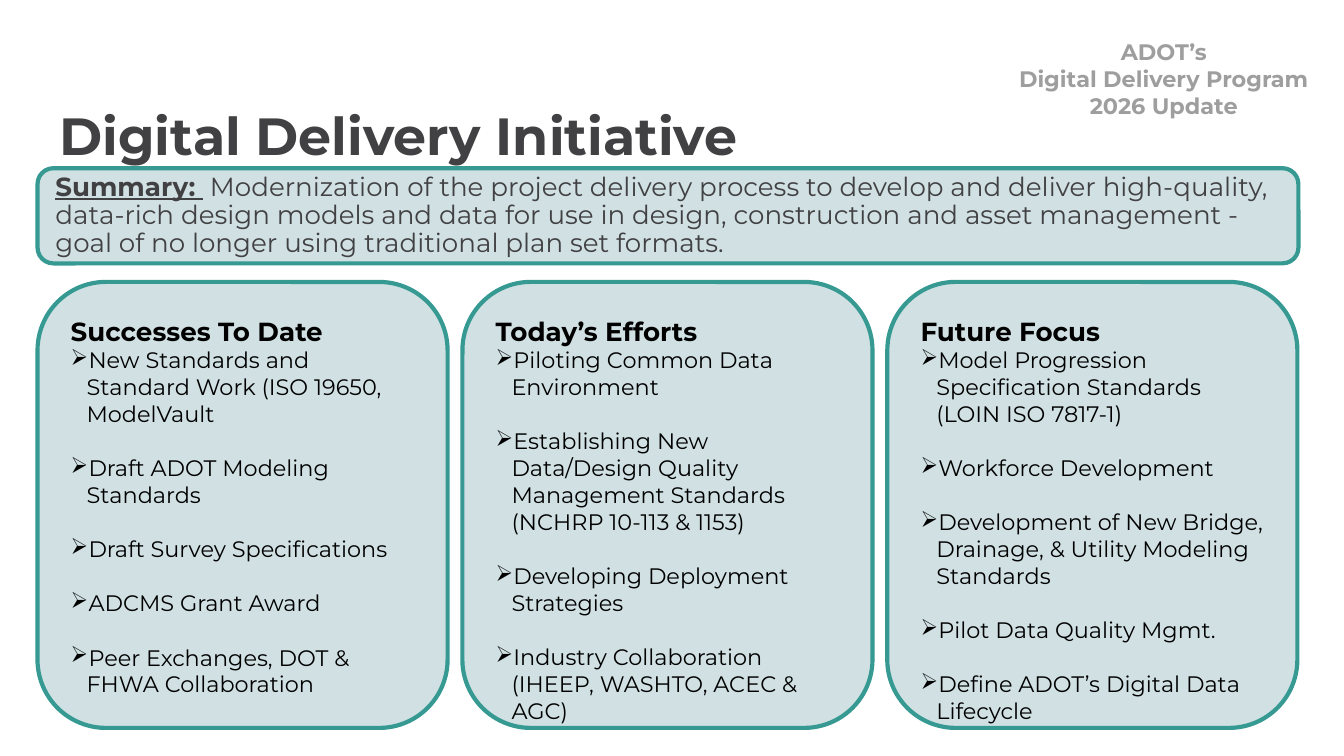
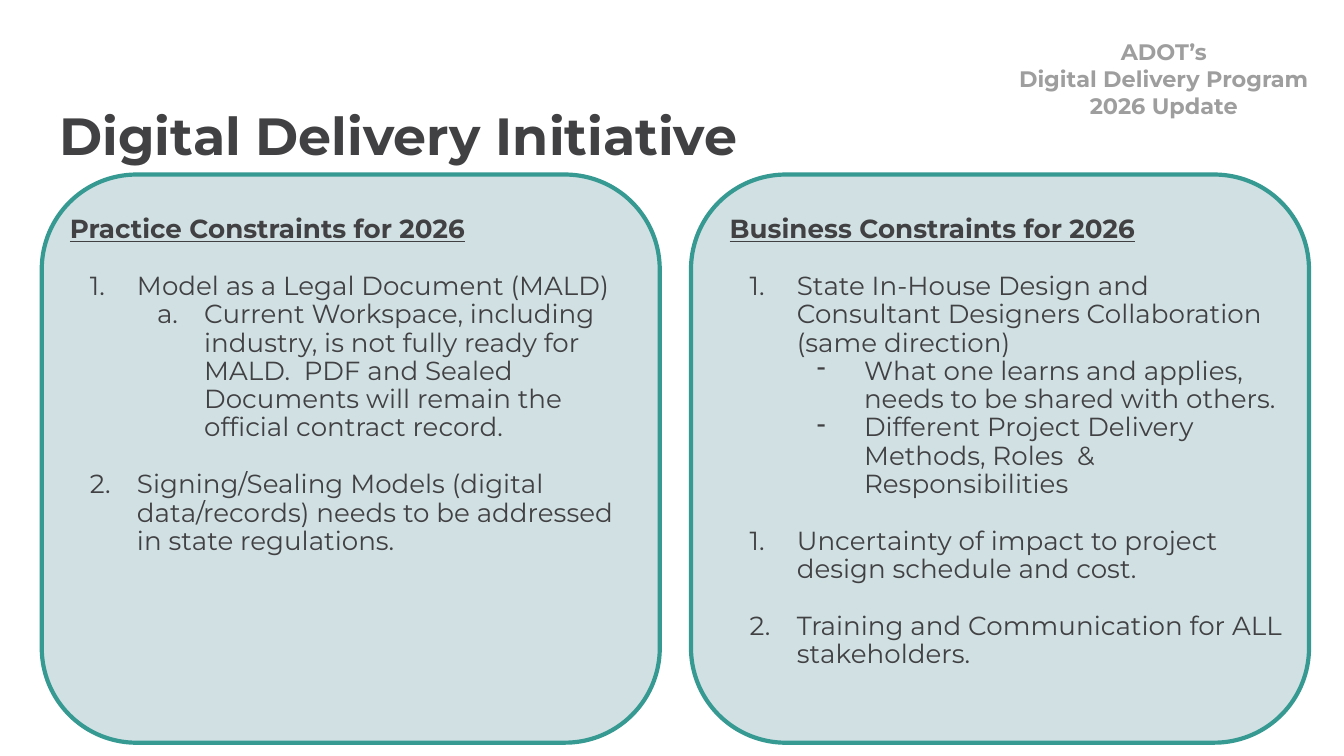
from lxml.etree import SubElement
from pptx import Presentation
from pptx.dml.color import RGBColor
from pptx.enum.shapes import MSO_SHAPE
from pptx.enum.text import MSO_ANCHOR, MSO_AUTO_SIZE, PP_ALIGN
from pptx.oxml.ns import qn
from pptx.util import Cm, Pt

INK = RGBColor(0x41, 0x40, 0x42)
BLACK = RGBColor(0x00, 0x00, 0x00)
GRAY = RGBColor(0x9E, 0x9E, 0x9E)
TEAL = RGBColor(0x36, 0x99, 0x92)
PALE = RGBColor(0xD0, 0xE0, 0xE3)
FONT = "Montserrat"

CARD_GAP = 14.6  # one 12 pt line
LIST_GAP = 15.3  # one 14 pt line at 90 %

# Kind of list item: bullet element, its attributes, left margin, hanging indent, level
BULLETS = {
    "arrow": ("a:buChar", {"char": "➢"}, 0.3, -0.53, 0),
    "number": ("a:buAutoNum", {"type": "arabicPeriod"}, 1.27, -0.89, 0),
    "letter": ("a:buAutoNum", {"type": "alphaLcPeriod"}, 2.54, -0.89, 1),
    "dash": ("a:buChar", {"char": "-"}, 2.54, -0.89, 0),
}

FOCUS_AREAS = [
    ("Successes To Date", [
        "New Standards and Standard Work (ISO 19650, ModelVault)"[:-1],
        "Draft ADOT Modeling Standards",
        "Draft Survey Specifications",
        "ADCMS Grant Award",
        "Peer Exchanges, DOT & FHWA Collaboration",
    ]),
    ("Today’s Efforts", [
        "Piloting Common Data Environment",
        "Establishing New Data/Design Quality Management Standards (NCHRP 10-113 & 1153)",
        "Developing Deployment Strategies",
        "Industry Collaboration (IHEEP, WASHTO, ACEC & AGC)",
    ]),
    ("Future Focus", [
        "Model Progression Specification Standards (LOIN ISO 7817-1)",
        "Workforce Development",
        "Development of New Bridge, Drainage, & Utility Modeling Standards",
        "Pilot Data Quality Mgmt.",
        "Define ADOT’s Digital Data Lifecycle",
    ]),
]

CONSTRAINTS = [
    ("Practice Constraints for 2026", 8.59, [
        ("number", "Model as a Legal Document (MALD)"),
        ("letter", "Current Workspace, including industry, is not fully ready for MALD.  "
                   "PDF and Sealed Documents will remain the official contract record."),
        ("number", "Signing/Sealing Models (digital data/records) needs to be addressed "
                   "in state regulations."),
    ]),
    ("Business Constraints for 2026", 9.68, [
        ("number", "State In-House Design and Consultant Designers Collaboration "
                   "(same direction)"),
        ("dash", "What one learns and applies, needs to be shared with others."),
        ("dash", "Different Project Delivery Methods, Roles  & Responsibilities"),
        ("number", "Uncertainty of impact to project design schedule and cost."),
        ("number", "Training and Communication for ALL stakeholders."),
    ]),
]


def add_text(frame, text, para=None, size=14, color=INK, bold=False, underline=False,
             align=PP_ALIGN.LEFT, bullet=None, before=0, spacing=None):
    """Add a paragraph, or a further span when para is given."""
    if para is None:
        para = frame.paragraphs[0]
        if para.runs:
            para = frame.add_paragraph()
        para.alignment = align
        para.space_before = Pt(before)
        if spacing:
            para.line_spacing = spacing
        if bullet:
            tag, attributes, margin, indent, para.level = BULLETS[bullet]
            properties = para._p.get_or_add_pPr()
            properties.set("marL", str(Cm(margin)))
            properties.set("indent", str(Cm(indent)))
            tint = SubElement(properties, qn("a:buClr"))
            SubElement(tint, qn("a:srgbClr"), val=str(color))
            SubElement(properties, qn(tag), attributes)
    span = para.add_run()
    span.text = text
    span.font.name = FONT
    span.font.size = Pt(size)
    span.font.bold = bold
    span.font.underline = underline
    span.font.color.rgb = color
    return para


class Slides:
    def __init__(self):
        self.deck = Presentation()
        self.deck.slide_width, self.deck.slide_height = Cm(25.4), Cm(14.29)
        self.page = None

    def new_page(self):
        self.page = self.deck.slides.add_slide(self.deck.slide_layouts[6])
        self.title("Digital Delivery Initiative")
        self.program_label("ADOT’s", "Digital Delivery Program", "2026 Update")

    def prepare(self, box, anchor=MSO_ANCHOR.TOP):
        frame = box.text_frame
        frame.word_wrap = True
        frame.vertical_anchor = anchor
        frame.margin_left = frame.margin_right = Cm(0.25)
        frame.margin_top = frame.margin_bottom = Cm(0.25)
        return frame

    def text_box(self, left, top, width, height, grow=True):
        box = self.page.shapes.add_textbox(Cm(left), Cm(top), Cm(width), Cm(height))
        frame = self.prepare(box)
        frame.auto_size = MSO_AUTO_SIZE.SHAPE_TO_FIT_TEXT if grow else MSO_AUTO_SIZE.NONE
        return frame

    def card(self, left, top, width, height, anchor=MSO_ANCHOR.TOP):
        box = self.page.shapes.add_shape(
            MSO_SHAPE.ROUNDED_RECTANGLE, Cm(left), Cm(top), Cm(width), Cm(height))
        box.shadow.inherit = False
        box.fill.solid()
        box.fill.fore_color.rgb = PALE
        box.line.color.rgb = TEAL
        box.line.width = Pt(2.25)
        return self.prepare(box, anchor)

    def title(self, text):
        add_text(self.text_box(0.87, 1.7, 23.67, 1.6, grow=False), text, size=28, bold=True)

    def program_label(self, *lines):
        frame = self.text_box(18.54, 0.48, 6.91, 2.06)
        for line in lines:
            add_text(frame, line, size=12, color=GRAY, bold=True, align=PP_ALIGN.CENTER)

    def focus_card(self, left, heading, items):
        frame = self.card(left, 5.33, 7.75, 8.43)
        add_text(frame, heading, color=BLACK, bold=True)
        for index, item in enumerate(items):
            add_text(frame, item, size=12, color=BLACK, bullet="arrow",
                     before=CARD_GAP if index else 0)

    def constraint_list(self, left, height, heading, items):
        frame = self.text_box(left, 3.3, 11.2, height)
        frame.margin_top = Cm(0.79)
        add_text(frame, heading, bold=True, underline=True, spacing=0.9)
        for kind, item in items:
            add_text(frame, item, bullet=kind, spacing=0.9,
                     before=LIST_GAP if kind == "number" else 0)


def main():
    slides = Slides()

    # Summary and three focus areas
    slides.new_page()
    summary = slides.card(0.71, 3.18, 23.83, 1.8, MSO_ANCHOR.MIDDLE)
    para = add_text(summary, "Summary: ", bold=True, underline=True, spacing=0.9)
    add_text(summary, " Modernization of the project delivery process to develop and deliver "
             "high-quality, data-rich design models and data for use in design, construction "
             "and asset management - goal of no longer using traditional plan set formats.",
             para=para)
    for column, (heading, items) in enumerate(FOCUS_AREAS):
        slides.focus_card(0.71 + column * 8.03, heading, items)

    # Practice and business constraints
    slides.new_page()
    for column, (heading, height, items) in enumerate(CONSTRAINTS):
        slides.card(0.79 + column * 12.27, 3.3, 11.68, 10.74)
        slides.constraint_list(1.07 + column * 12.47, height, heading, items)

    slides.deck.save("out.pptx")


if __name__ == "__main__":
    main()
